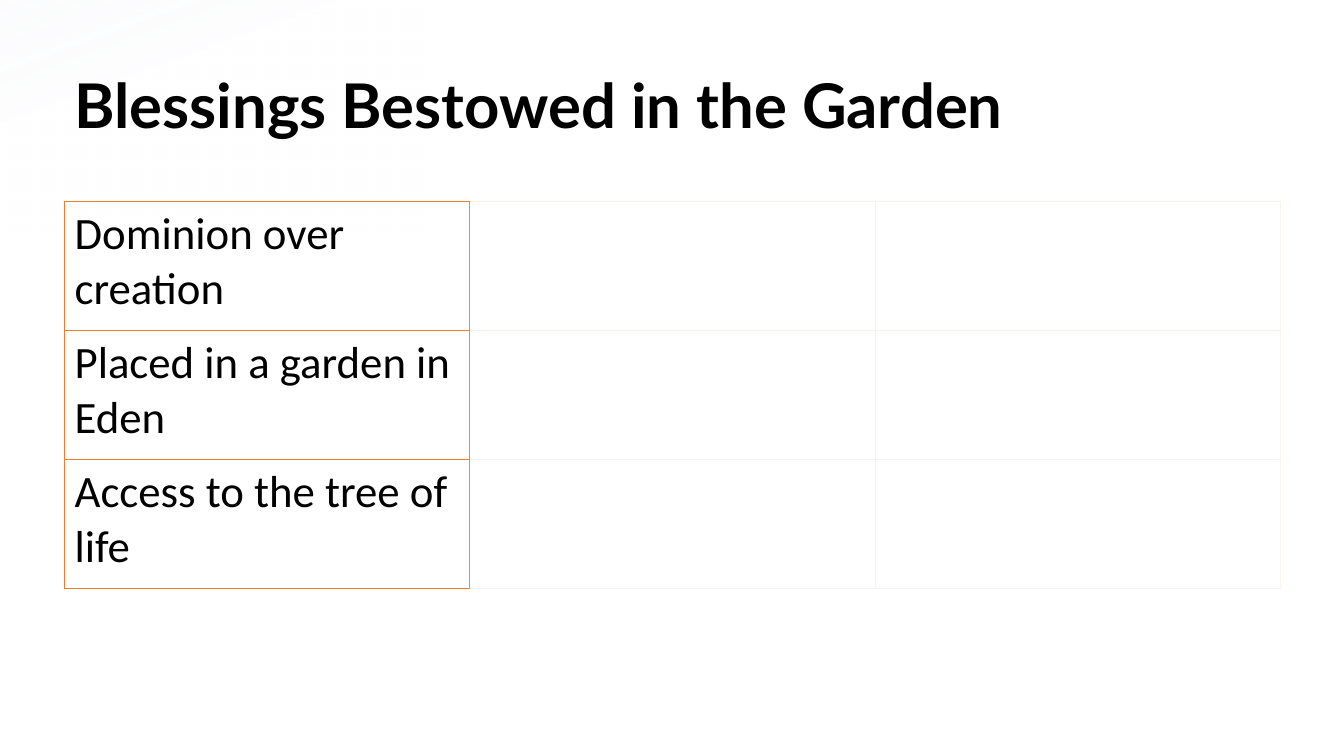
from lxml.etree import SubElement
from pptx import Presentation
from pptx.dml.color import RGBColor
from pptx.enum.shapes import MSO_SHAPE
from pptx.enum.text import MSO_ANCHOR
from pptx.oxml import parse_xml
from pptx.oxml.ns import nsdecls, qn
from pptx.util import Inches, Pt

BLACK = RGBColor(0x00, 0x00, 0x00)
WHITE = RGBColor(0xFF, 0xFF, 0xFF)
MIST = RGBColor(0xF6, 0xF8, 0xFC)
ORANGE = RGBColor(0xED, 0x7D, 0x31)

LEFT, CONTENT_WIDTH = 0.64, 12.06
TABLE_TOP, ROW_HEIGHT, COLUMNS = 2, 1.28, 3
BLESSINGS = [
    "Dominion over creation",
    "Placed in a garden in Eden",
    "Access to the tree of life",
]
# Position, colour and opacity, in percent
GLOW_STOPS = [(0, MIST, 25), (34, WHITE, 70), (53, WHITE, 85), (67, WHITE, 100)]


def add_panel(slide, left, top, width, height):
    shape = slide.shapes.add_shape(
        MSO_SHAPE.RECTANGLE, Inches(left), Inches(top), Inches(width), Inches(height))
    shape.shadow.inherit = False
    shape.line.fill.background()
    return shape


def add_glow(slide, left, top, width, height, angle):
    shape = add_panel(slide, left, top, width, height)
    stops = "".join(
        f'<a:gs pos="{position * 1000}"><a:srgbClr val="{color}">'
        f'<a:alpha val="{opacity * 1000}"/></a:srgbClr></a:gs>'
        for position, color, opacity in GLOW_STOPS)
    gradient = parse_xml(
        f'<a:gradFill {nsdecls("a")} rotWithShape="1"><a:gsLst>{stops}</a:gsLst>'
        f'<a:lin ang="{angle * 60000}" scaled="0"/></a:gradFill>')
    shape._element.spPr.find(qn("a:prstGeom")).addnext(gradient)


def add_veil(slide, left, top, width, height, opacity):
    shape = add_panel(slide, left, top, width, height)
    shape.fill.solid()
    shape.fill.fore_color.rgb = WHITE
    color = shape._element.spPr.find(qn("a:solidFill")).find(qn("a:srgbClr"))
    SubElement(color, qn("a:alpha"), val=str(opacity * 1000))


def style_font(paragraph, name, size, bold=False):
    paragraph.font.name = name
    paragraph.font.size = Pt(size)
    paragraph.font.bold = bold
    paragraph.font.color.rgb = BLACK


def add_title(slide, text):
    box = slide.shapes.add_textbox(
        Inches(LEFT), Inches(0.35), Inches(CONTENT_WIDTH), Inches(1.45))
    frame = box.text_frame
    frame.word_wrap = True
    frame.vertical_anchor = MSO_ANCHOR.MIDDLE
    paragraph = frame.paragraphs[0]
    paragraph.text = text
    paragraph.line_spacing = 0.9
    style_font(paragraph, "Lato", 44, bold=True)


def style_cell(cell):
    properties = cell._tc.get_or_add_tcPr()
    for side in ("lnL", "lnR", "lnT", "lnB"):
        border = SubElement(properties, qn(f"a:{side}"), w=str(Pt(1)))
        fill = SubElement(border, qn("a:solidFill"))
        SubElement(fill, qn("a:srgbClr"), val=str(ORANGE))
    cell.fill.background()


def add_blessings_table(slide):
    table = slide.shapes.add_table(
        len(BLESSINGS), COLUMNS, Inches(LEFT), Inches(TABLE_TOP),
        Inches(CONTENT_WIDTH), Inches(ROW_HEIGHT * len(BLESSINGS))).table
    table.first_row = False
    table.horz_banding = False
    for cell in table.iter_cells():
        style_cell(cell)
    # Only the first column carries text
    for row, blessing in enumerate(BLESSINGS):
        paragraph = table.cell(row, 0).text_frame.paragraphs[0]
        paragraph.text = blessing
        style_font(paragraph, "Calibri", 32)


def main():
    presentation = Presentation()
    presentation.slide_width = Inches(13.33)
    presentation.slide_height = Inches(7.5)
    slide = presentation.slides.add_slide(presentation.slide_layouts[6])
    slide.background.fill.solid()
    slide.background.fill.fore_color.rgb = WHITE

    # Corner glow, title and table
    add_glow(slide, 0, 0, 4.2, 2.37, angle=70)
    add_title(slide, "Blessings Bestowed in the Garden")
    add_blessings_table(slide)

    # Veil that fades the last two columns
    add_veil(slide, LEFT + CONTENT_WIDTH / COLUMNS, 1.8, 8.09, 4.56, opacity=90)
    presentation.save("out.pptx")


if __name__ == "__main__":
    main()
